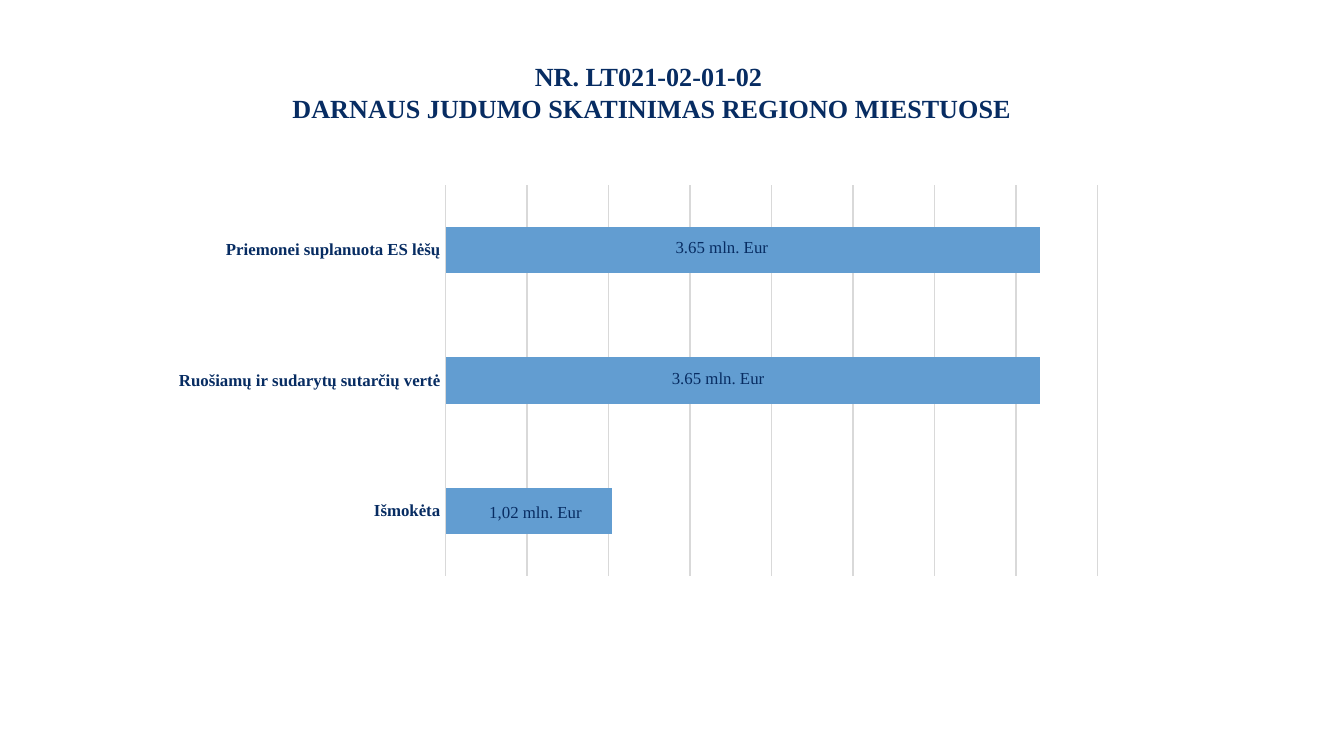
import pptx
import pptx.chart.data
import pptx.dml.color
import pptx.enum.chart
import pptx.enum.text
import pptx.oxml
import pptx.oxml.ns
import pptx.util
from pptx.util import Cm

NAVY = pptx.dml.color.RGBColor(0x07, 0x2C, 0x62)
BLUE = pptx.dml.color.RGBColor(0x62, 0x9D, 0xD1)
GREY = pptx.dml.color.RGBColor(0xD9, 0xD9, 0xD9)
FONT = "Times New Roman"

TITLE = ["NR. LT021-02-01-02 ", "DARNAUS JUDUMO SKATINIMAS REGIONO MIESTUOSE"]
BARS = [
    ("Išmokėta", 1.02, " 1,02 mln. Eur", Cm(0.09), Cm(0.04)),
    ("Ruošiamų ir sudarytų sutarčių vertė", 3.65, "3.65 mln. Eur", Cm(-0.47), Cm(-0.04)),
    ("Priemonei suplanuota ES lėšų", 3.65, "3.65 mln. Eur", Cm(-0.4), Cm(-0.04)),
]


def style_font(font, size, bold):
    """Apply the slide's typeface and navy colour."""
    font.name = FONT
    font.size = pptx.util.Pt(size)
    font.bold = bold
    font.color.rgb = NAVY


def style_line(line):
    """Make a thin grey chart line."""
    line.color.rgb = GREY
    line.width = pptx.util.Pt(0.75)


def set_layout(parent, index, **values):
    """Insert a manual chart layout as the given child of parent."""
    for old in parent.findall(pptx.oxml.ns.qn("c:layout")):
        parent.remove(old)
    items = "".join(f'<c:{k} val="{v}"/>' for k, v in values.items())
    parent.insert(index, pptx.oxml.parse_xml(
        f'<c:layout {pptx.oxml.ns.nsdecls("c")}>'
        f"<c:manualLayout>{items}</c:manualLayout></c:layout>"))


def add_title(slide, left, top, width, height):
    """Fill the title placeholder with one centred paragraph per line."""
    sp = slide.shapes.title
    sp.left, sp.top, sp.width, sp.height = left, top, width, height
    tf = sp.text_frame
    tf.word_wrap = True
    tf.auto_size = pptx.enum.text.MSO_AUTO_SIZE.NONE
    tf.vertical_anchor = pptx.enum.text.MSO_ANCHOR.MIDDLE
    for i, text in enumerate(TITLE):
        p = tf.add_paragraph() if i else tf.paragraphs[0]
        p.alignment = pptx.enum.text.PP_ALIGN.CENTER
        p.line_spacing = pptx.util.Pt(17.3)
        p.space_before = pptx.util.Pt(0)
        r = p.add_run()
        r.text = text
        style_font(r.font, 14, True)


def add_funding_chart(slide, left, top, width, height):
    """Draw the horizontal bar chart of funding with its labels."""
    data = pptx.chart.data.CategoryChartData(number_format="0.00")
    data.categories = [bar[0] for bar in BARS]
    data.add_series("Series 1", [bar[1] for bar in BARS])
    chart = slide.shapes.add_chart(
        pptx.enum.chart.XL_CHART_TYPE.BAR_CLUSTERED,
        left, top, width, height, data).chart
    chart.has_legend = False
    chart.has_title = False
    chart.font.name = "League Spartan"
    chart.font.size = pptx.util.Pt(10)
    chart.font.color.rgb = pptx.dml.color.RGBColor(0, 0, 0)
    plot = chart.plots[0]
    set_layout(plot._element.getparent(), 0, layoutTarget="inner",
               xMode="edge", yMode="edge",
               x=round(Cm(5.4) / width, 4), y=round(Cm(0.17) / height, 4),
               w=round(Cm(12.32) / width, 4), h=round(Cm(7.39) / height, 4))

    axis = chart.category_axis
    axis.major_tick_mark = pptx.enum.chart.XL_TICK_MARK.NONE
    style_font(axis.tick_labels.font, 9, True)
    style_line(axis.format.line)

    axis = chart.value_axis
    axis.visible = False
    axis.minimum_scale, axis.maximum_scale, axis.major_unit = 0, 4, 0.5
    axis.has_major_gridlines = True
    style_line(axis.major_gridlines.format.line)

    plot.gap_width = 182
    plot.vary_by_categories = False
    series = plot.series[0]
    series.format.fill.solid()
    series.format.fill.fore_color.rgb = BLUE
    series.data_labels.show_value = True
    style_font(series.data_labels.font, 9, True)
    for i, (_, _, text, dx, dy) in enumerate(BARS):
        label = series.points[i].data_label
        r = label.text_frame.paragraphs[0].add_run()
        r.text = text
        style_font(r.font, 9, False)
        label.position = pptx.enum.chart.XL_LABEL_POSITION.CENTER
        set_layout(series._element.findall(".//" + pptx.oxml.ns.qn("c:dLbl"))[i], 1,
                   x=round(dx / width, 4), y=round(dy / height, 4))


def main():
    """Build and save the one-slide presentation."""
    prs = pptx.Presentation()
    prs.slide_width, prs.slide_height = Cm(25.4), Cm(14.29)
    slide = prs.slides.add_slide(prs.slide_layouts[5])
    add_title(slide, Cm(4.47), Cm(1.01), Cm(15.7), Cm(1.45))
    add_funding_chart(slide, Cm(3.02), Cm(3.33), Cm(18.08), Cm(7.72))
    prs.save("out.pptx")


if __name__ == "__main__":
    main()
